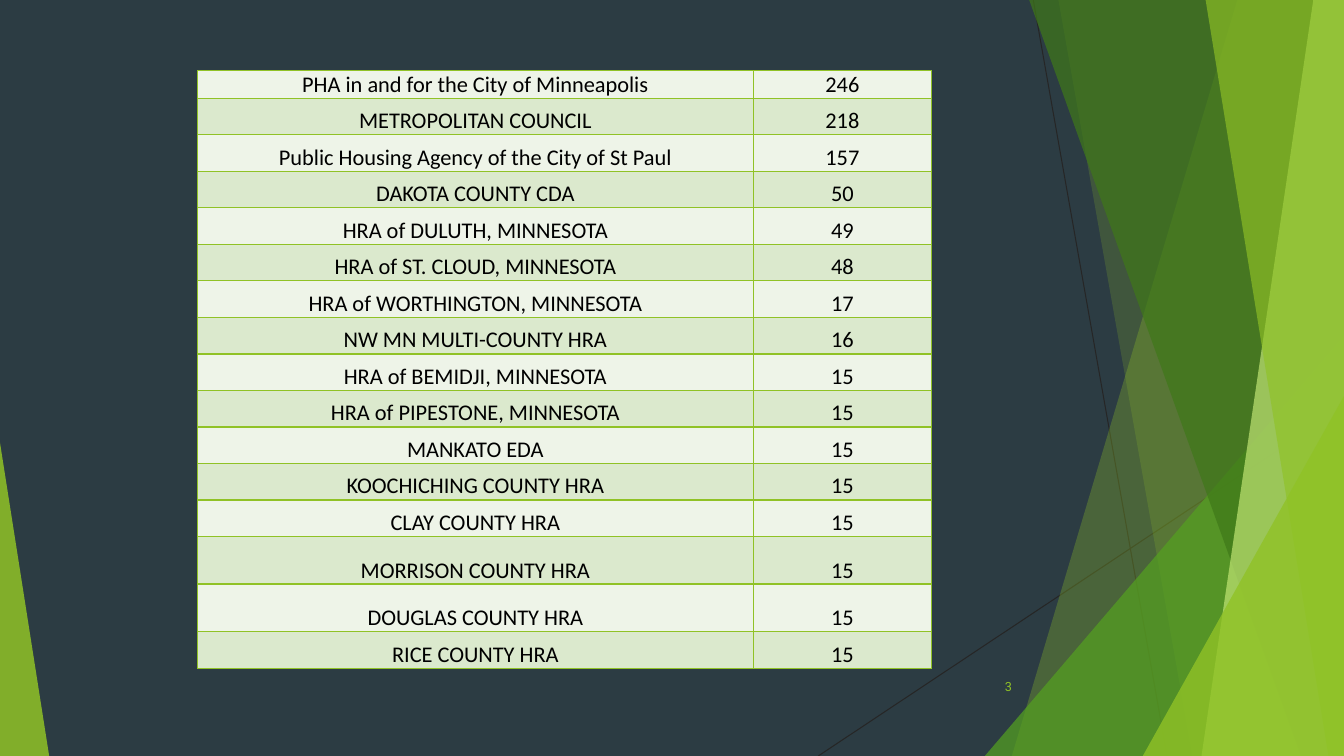
from lxml import etree
from pptx import Presentation
from pptx.dml.color import RGBColor
from pptx.enum import shapes, text
from pptx.oxml import ns
from pptx.util import Cm, Pt

WIDTH, HEIGHT = 33.87, 19.05
GREEN = "90C226"


def paint(fill, color, opacity=100):
    """Give a solid colour to a fill, with opacity in percent."""
    fill.solid()
    fill.fore_color.rgb = RGBColor.from_string(color)
    if opacity < 100:
        tint = fill._xPr.find(".//" + ns.qn("a:srgbClr"))
        etree.SubElement(tint, ns.qn("a:alpha"), val=str(opacity * 1000))


def write(frame, words, size, font, color, align):
    paragraph = frame.paragraphs[0]
    paragraph.alignment = align
    run = paragraph.add_run()
    run.text = words
    run.font.size = Pt(size)
    run.font.name = font
    paint(run.font.fill, color)


deck = Presentation()
deck.slide_width, deck.slide_height = Cm(WIDTH), Cm(HEIGHT)
slide = deck.slides.add_slide(deck.slide_layouts[6])
paint(slide.background.fill, "2C3C43")

# Thin crossing lines
for ends in [(26.04, 0, 29.41, HEIGHT), (WIDTH, 10.24, 20.62, HEIGHT)]:
    ray = slide.shapes.add_connector(shapes.MSO_CONNECTOR.STRAIGHT, *map(Cm, ends))
    paint(ray.line.fill, "262626")
    ray.line.width = Pt(0.75)
    etree.SubElement(ray._element.spPr, ns.qn("a:effectLst"))

# Bands run from a top-left x to a bottom-left x and fill up to the right edge.
# Triangles stand on the bottom edge: left, top, width, apex position.
facets = [
    ("band", (31.19, 25.5), GREEN, 30),
    ("band", (26.67, 30.05), GREEN, 20),
    ("triangle", (24.82, 8.46, 9.05, 1), "54A021", 72),
    ("band", (25.93, 32.79), "3F7819", 70),
    ("band", (33.1, 30.28), "C0E474", 70),
    ("band", (30.38, 33.48), GREEN, 65),
    ("triangle", (28.8, 9.98, 5.07, 1), GREEN, 80),
    ("triangle", (0, 11.15, 1.24, 0), GREEN, 85),
]
for kind, place, color, opacity in facets:
    if kind == "band":
        top_x, bottom_x = place
        outline = slide.shapes.build_freeform(Cm(top_x), Cm(-0.02))
        corners = [(WIDTH, -0.02), (WIDTH, HEIGHT), (bottom_x, HEIGHT)]
        outline.add_line_segments([(Cm(x), Cm(y)) for x, y in corners])
        facet = outline.convert_to_shape()
    else:
        left, top, width, apex = place
        facet = slide.shapes.add_shape(
            shapes.MSO_SHAPE.ISOSCELES_TRIANGLE,
            Cm(left), Cm(top), Cm(width), Cm(HEIGHT - top))
        facet.adjustments[0] = apex
    paint(facet.fill, color, opacity)
    facet.line.fill.background()
    facet.shadow.inherit = False

page_number = slide.shapes.add_textbox(Cm(23.85), Cm(16.79), Cm(1.9), Cm(1.02)).text_frame
page_number.word_wrap = True
page_number.vertical_anchor = text.MSO_ANCHOR.MIDDLE
write(page_number, "3", size=9, font="Roboto", color=GREEN, align=text.PP_ALIGN.RIGHT)

agencies = [
    ("PHA in and for the City of Minneapolis", 246),
    ("METROPOLITAN COUNCIL", 218),
    ("Public Housing Agency of the City of St Paul", 157),
    ("DAKOTA COUNTY CDA", 50),
    ("HRA of DULUTH, MINNESOTA", 49),
    ("HRA of ST. CLOUD, MINNESOTA", 48),
    ("HRA of WORTHINGTON, MINNESOTA", 17),
    ("NW MN MULTI-COUNTY HRA", 16),
    ("HRA of BEMIDJI, MINNESOTA", 15),
    ("HRA of PIPESTONE, MINNESOTA", 15),
    ("MANKATO EDA", 15),
    ("KOOCHICHING COUNTY HRA", 15),
    ("CLAY COUNTY HRA", 15),
    ("MORRISON COUNTY HRA", 15),
    ("DOUGLAS COUNTY HRA", 15),
    ("RICE COUNTY HRA", 15),
]
row_heights = [0.56] + [0.92] * 12 + [1.2] * 2 + [0.92]
agency_table = slide.shapes.add_table(
    len(agencies), 2, Cm(4.98), Cm(1.78), Cm(18.5), Cm(sum(row_heights))).table
for column, width in zip(agency_table.columns, (14, 4.5)):
    column.width = Cm(width)

for i, (agency, height) in enumerate(zip(agencies, row_heights)):
    agency_table.rows[i].height = Cm(height)
    for j, value in enumerate(agency):
        cell = agency_table.cell(i, j)
        cell.margin_left = cell.margin_right = cell.margin_top = Cm(0.02)
        cell.margin_bottom = 0
        cell.vertical_anchor = text.MSO_ANCHOR.BOTTOM
        for side in ("lnL", "lnR", "lnT", "lnB"):
            border = etree.SubElement(
                cell._tc.get_or_add_tcPr(), ns.qn("a:" + side), w=str(Pt(1)))
            border_fill = etree.SubElement(border, ns.qn("a:solidFill"))
            etree.SubElement(border_fill, ns.qn("a:srgbClr"), val=GREEN)
        paint(cell.fill, "DBE9CD" if i % 2 else "EEF4E8")
        write(cell.text_frame, str(value), size=16, font="Calibri",
              color="000000", align=text.PP_ALIGN.CENTER)

deck.save("out.pptx")
